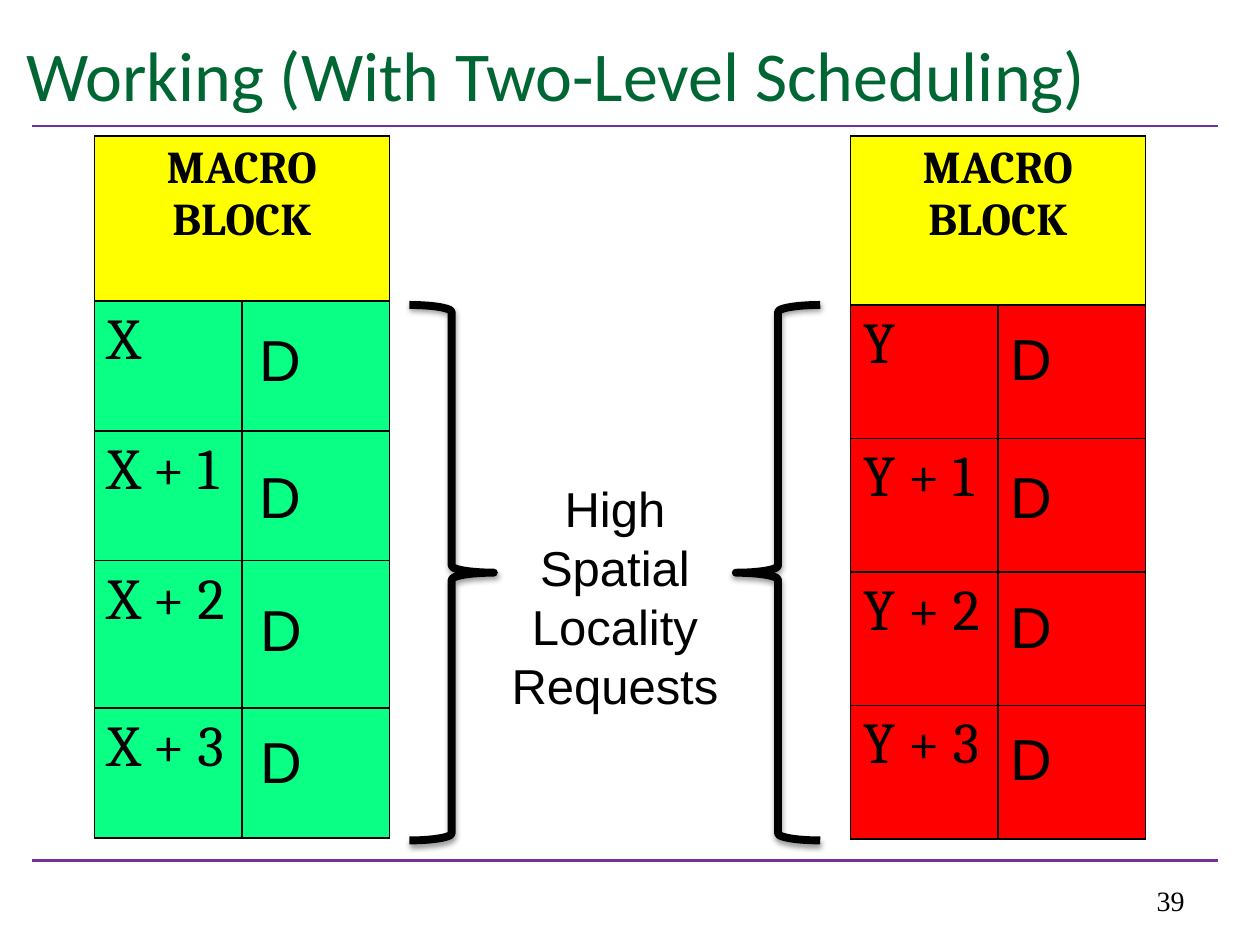
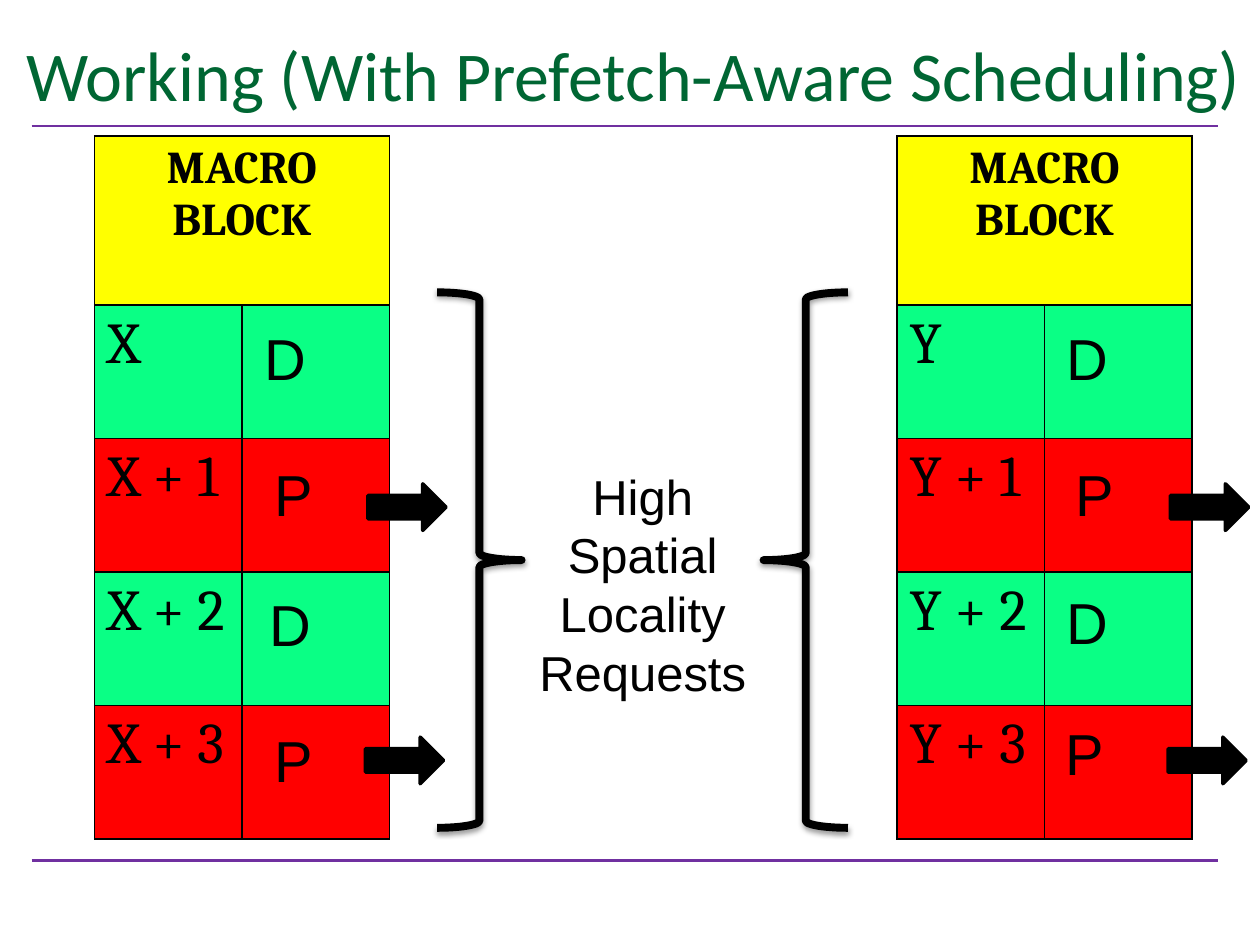
from lxml import etree
from pptx import Presentation
from pptx.dml.color import RGBColor
from pptx.enum.shapes import MSO_CONNECTOR, MSO_SHAPE
from pptx.enum.text import MSO_ANCHOR, PP_ALIGN
from pptx.oxml.ns import qn
from pptx.util import Emu, Pt

STRAIGHT = MSO_CONNECTOR.STRAIGHT
BRACE, ARROW = MSO_SHAPE.RIGHT_BRACE, MSO_SHAPE.LEFT_ARROW
TOP, MIDDLE, BOTTOM = MSO_ANCHOR.TOP, MSO_ANCHOR.MIDDLE, MSO_ANCHOR.BOTTOM
LEFT, CENTER, RIGHT = PP_ALIGN.LEFT, PP_ALIGN.CENTER, PP_ALIGN.RIGHT

EMU_PER_PX = 9144  # 100 px to the inch
COLORS = {
    "title": "006633",
    "rule": "7030A0",
    "ink": "000000",
    "header": "FFFF00",
    "green": "0AFF85",
    "red": "FF0000",
}
EVEN_ROWS = [134, 106, 106, 106, 106]
LEFT_DEMAND_ROWS = [131, 103, 103, 117, 103]


def px(length):
    return Emu(length * EMU_PER_PX)


def place(*lengths):
    return [px(length) for length in lengths]


def color(name):
    return RGBColor.from_string(COLORS[name])


def style_para(para, size, font, ink="ink", align=LEFT, bold=False):
    para.alignment = align
    para.font.size = Pt(size)
    para.font.name = font
    para.font.bold = bold
    para.font.color.rgb = color(ink)


def add_text(page, text, at, size, font, ink="ink", align=LEFT, anchor=MIDDLE):
    box = page.shapes.add_textbox(*place(*at))
    frame = box.text_frame
    frame.word_wrap = True
    frame.vertical_anchor = anchor
    frame.text = text
    style_para(frame.paragraphs[0], size, font, ink, align)


# Frame shared by the slides
def add_rule(page, top):
    rule = page.shapes.add_connector(STRAIGHT, *place(25, top, 967, top))
    rule.line.color.rgb = color("rule")
    rule.line.width = Pt(1.5)
    etree.SubElement(rule._element.spPr, qn("a:effectLst"))


def add_page(deck, title):
    page = deck.slides.add_slide(deck.slide_layouts[6])
    for top in (683, 100):
        add_rule(page, top)
    add_text(page, title, (11, 17, 1017, 83), 40, "Calibri", "title")
    return page


# Macro block tables
def set_borders(cell):
    properties = cell._tc.get_or_add_tcPr()
    for index, side in enumerate(("lnL", "lnR", "lnT", "lnB")):
        border = etree.Element(qn("a:" + side), w=str(Pt(1)))
        fill = etree.SubElement(border, qn("a:solidFill"))
        etree.SubElement(fill, qn("a:srgbClr"), val=COLORS["ink"])
        properties.insert(index, border)


def add_macro_block(page, left, address, fills, heights=EVEN_ROWS):
    at = place(left, 108, 234, sum(heights))
    table = page.shapes.add_table(len(heights), 2, *at).table
    for column in table.columns:
        column.width = px(117)
    for row, height, fill in zip(table.rows, heights, ["header"] + fills):
        row.height = px(height)
        for cell in row.cells:
            cell.fill.solid()
            cell.fill.fore_color.rgb = color(fill)
            set_borders(cell)

    header = table.cell(0, 0)
    header.merge(table.cell(0, 1))
    header.text = "MACRO\nBLOCK"
    for para in header.text_frame.paragraphs:
        style_para(para, 26, "Cambria", align=CENTER, bold=True)

    for offset in range(len(fills)):
        cell = table.cell(offset + 1, 0)
        cell.text = f"{address} + {offset}" if offset else address
        style_para(cell.text_frame.paragraphs[0], 33, "Cambria")


def add_requests(page, letter, corners, height):
    for left, top in corners:
        add_text(page, letter, (left, top, 117, height), 33, "Arial")


# Braces, their label and the prefetch arrows
def add_outline(page, kind, at, width, rotation=0):
    shape = page.shapes.add_shape(kind, *place(*at))
    shape.rotation = rotation
    shape.shadow.inherit = False
    shape.line.color.rgb = color("ink")
    shape.line.width = Pt(width)
    etree.SubElement(shape.line._get_or_add_ln(), qn("a:round"))
    return shape


def add_soft_shadow(shape):
    effects = shape._element.spPr.find(qn("a:effectLst"))
    shadow = etree.SubElement(
        effects, qn("a:outerShdw"), blurRad=str(Pt(3.1)), dist=str(Pt(1.6)),
        dir="5400000", rotWithShape="0")
    tint = etree.SubElement(shadow, qn("a:srgbClr"), val=COLORS["ink"])
    etree.SubElement(tint, qn("a:alpha"), val="38000")


def add_locality_note(page, left, top):
    for brace_left, rotation in ((left, 0), (left + 259, 180)):
        brace = add_outline(page, BRACE, (brace_left, top, 67, 425), 4.5, rotation)
        brace.fill.background()
        add_soft_shadow(brace)
    add_text(page, "High Spatial Locality Requests", (left + 67, top + 133, 192, 199),
             28, "Arial", align=CENTER, anchor=TOP)


def add_prefetch_arrow(page, left, top):
    arrow = add_outline(page, ARROW, (left, top, 62, 37), 2, 180)
    arrow.fill.solid()
    arrow.fill.fore_color.rgb = color("ink")


def build_two_level(deck):
    page = add_page(deck, "Working (With Two-Level Scheduling)")
    add_text(page, "39", (717, 683, 233, 50), 16, "Times New Roman",
             align=RIGHT, anchor=BOTTOM)
    add_macro_block(page, 75, "X", ["green"] * 4, LEFT_DEMAND_ROWS)
    add_macro_block(page, 675, "Y", ["red"] * 4)
    add_requests(page, "D", [(196, 228), (196, 337), (197, 442), (197, 547)], 113)
    add_requests(page, "D", [(792, top) for top in (227, 337, 440, 545)], 113)
    add_locality_note(page, 325, 242)


def build_prefetch_aware(deck):
    page = add_page(deck, "Working (With Prefetch-Aware Scheduling)")
    for left, address in ((75, "X"), (712, "Y")):
        add_macro_block(page, left, address, ["green", "red"] * 2)
    add_requests(page, "D", [(200, 227), (204, 438), (837, 227), (837, 437)], 113)
    add_requests(page, "P", [(208, 338), (208, 549), (844, 338), (836, 543)], 108)
    for left in (292, 929):
        add_prefetch_arrow(page, left, 384)
        add_prefetch_arrow(page, left - 2, 585)
    add_locality_note(page, 347, 232)


def main():
    deck = Presentation()
    deck.slide_width, deck.slide_height = place(1000, 750)
    build_two_level(deck)
    build_prefetch_aware(deck)
    deck.save("out.pptx")


if __name__ == "__main__":
    main()
